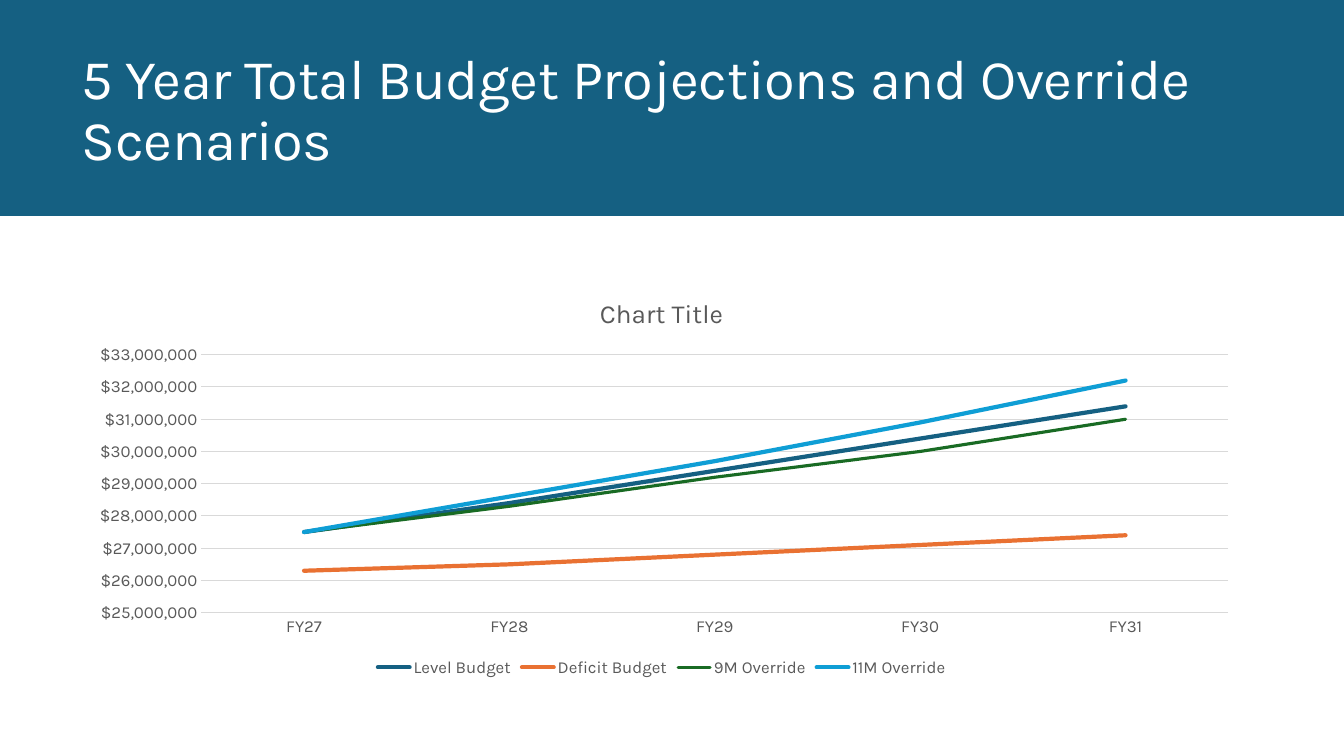
from dataclasses import dataclass

from lxml.etree import SubElement
from pptx import Presentation
from pptx.chart.chart import Chart
from pptx.chart.data import CategoryChartData
from pptx.dml.color import RGBColor
from pptx.enum.chart import XL_CHART_TYPE, XL_LEGEND_POSITION, XL_TICK_MARK
from pptx.enum.shapes import MSO_SHAPE
from pptx.enum.text import MSO_ANCHOR, MSO_AUTO_SIZE, PP_ALIGN
from pptx.oxml.ns import qn
from pptx.slide import Slide
from pptx.util import Pt

TEAL = RGBColor(0x15, 0x60, 0x82)
ORANGE = RGBColor(0xE9, 0x71, 0x32)
GREEN = RGBColor(0x19, 0x6B, 0x24)
BLUE = RGBColor(0x0F, 0x9E, 0xD5)
WHITE = RGBColor(0xFF, 0xFF, 0xFF)
BLACK = RGBColor(0x00, 0x00, 0x00)
TEXT_GREY = RGBColor(0x59, 0x59, 0x59)
RULE_GREY = RGBColor(0xD9, 0xD9, 0xD9)

FONT = "Karla"
MILLION = 1_000_000
SLIDE_WIDTH, SLIDE_HEIGHT = Pt(960), Pt(540)
LEFT_MARGIN = Pt(51.1)
YEARS = [f"FY{year}" for year in range(27, 32)]
PLOT_LAYOUT = {"x": 0.11, "y": 0.19, "w": 0.87, "h": 0.64}


@dataclass
class Scenario:
    name: str
    millions: tuple[float, ...]
    color: RGBColor
    width: float = 3


SCENARIOS = [
    Scenario("Level Budget", (27.5, 28.4, 29.4, 30.4, 31.4), TEAL),
    Scenario("Deficit Budget", (26.3, 26.5, 26.8, 27.1, 27.4), ORANGE),
    Scenario("9M Override", (27.5, 28.3, 29.2, 30.0, 31.0), GREEN, 2.25),
    Scenario("11M Override", (27.5, 28.6, 29.7, 30.9, 32.2), BLUE),
]


def set_attributes(target: object, values: dict[str, object]) -> None:
    for name, value in values.items():
        setattr(target, name, value)


def format_font(font: object, size: float, color: RGBColor) -> None:
    set_attributes(font, {"name": FONT, "size": Pt(size), "bold": False})
    font.color.rgb = color


def format_line(line: object, color: RGBColor, width: float) -> None:
    line.color.rgb = color
    line.width = Pt(width)


def add_header(slide: Slide) -> None:
    title = slide.shapes.title
    set_attributes(title, {"left": LEFT_MARGIN, "top": Pt(28.8),
                           "width": Pt(848.9), "height": Pt(97.9)})
    frame = title.text_frame
    frame.text = "5 Year Total Budget Projections and Override Scenarios"
    set_attributes(frame, {"word_wrap": True, "auto_size": MSO_AUTO_SIZE.NONE,
                           "vertical_anchor": MSO_ANCHOR.BOTTOM})
    paragraph = frame.paragraphs[0]
    set_attributes(paragraph, {"alignment": PP_ALIGN.LEFT, "line_spacing": 0.9})
    run = paragraph.runs[0]
    format_font(run.font, 40, WHITE)
    run.font.element.set("spc", "-20") if hasattr(run.font, "element") else None

    # Band, placed behind the title
    band = slide.shapes.add_shape(MSO_SHAPE.RECTANGLE, 0, 0, SLIDE_WIDTH, Pt(154.3))
    band.shadow.inherit = False
    band.fill.solid()
    band.fill.fore_color.rgb = TEAL
    band.line.fill.background()
    band.element.addnext(title.element)
    for properties in title.element.iter(qn("a:rPr")):
        properties.set("spc", "-20")


def place_plot(chart: Chart) -> None:
    plot_area = chart.element.find(".//" + qn("c:plotArea"))
    for layout in plot_area.findall(qn("c:layout")):
        plot_area.remove(layout)
    layout = SubElement(plot_area, qn("c:layout"))
    plot_area.insert(0, layout)
    manual = SubElement(layout, qn("c:manualLayout"))
    settings = {"layoutTarget": "inner", "xMode": "edge", "yMode": "edge", **PLOT_LAYOUT}
    for name, value in settings.items():
        SubElement(manual, qn(f"c:{name}")).set("val", str(value))


def add_budget_chart(slide: Slide) -> None:
    data = CategoryChartData(number_format='"$"#,##0')
    data.categories = YEARS
    for scenario in SCENARIOS:
        data.add_series(scenario.name, [round(value * MILLION) for value in scenario.millions])
    chart = slide.shapes.add_chart(XL_CHART_TYPE.LINE, LEFT_MARGIN, Pt(198.7),
                                   Pt(843.1), Pt(288), data).chart
    format_font(chart.font, 10, BLACK)

    # Title and legend
    chart.has_title = True
    title_frame = chart.chart_title.text_frame
    title_frame.text = "Chart Title"
    format_font(title_frame.paragraphs[0].runs[0].font, 18.6, TEXT_GREY)
    chart.has_legend = True
    set_attributes(chart.legend, {"position": XL_LEGEND_POSITION.BOTTOM,
                                  "include_in_layout": False})
    format_font(chart.legend.font, 12, TEXT_GREY)

    # Axes
    for axis in (chart.category_axis, chart.value_axis):
        set_attributes(axis, {"major_tick_mark": XL_TICK_MARK.NONE,
                              "minor_tick_mark": XL_TICK_MARK.NONE})
        format_font(axis.tick_labels.font, 12, TEXT_GREY)
    format_line(chart.category_axis.format.line, RULE_GREY, 0.75)
    value_axis = chart.value_axis
    set_attributes(value_axis, {"minimum_scale": 25 * MILLION, "maximum_scale": 33 * MILLION,
                                "major_unit": MILLION, "has_major_gridlines": True})
    set_attributes(value_axis.tick_labels, {"number_format": '"$"#,##0',
                                            "number_format_is_linked": False})
    value_axis.format.line.fill.background()
    format_line(value_axis.major_gridlines.format.line, RULE_GREY, 0.75)

    # Scenario lines with round ends
    plot = chart.plots[0]
    plot.vary_by_categories = False
    for series, scenario in zip(plot.series, SCENARIOS):
        series.smooth = False
        format_line(series.format.line, scenario.color, scenario.width)
    for outline in chart.element.xpath(".//c:ser/c:spPr/a:ln"):
        outline.set("cap", "rnd")
    place_plot(chart)


def main() -> None:
    presentation = Presentation()
    set_attributes(presentation, {"slide_width": SLIDE_WIDTH, "slide_height": SLIDE_HEIGHT})
    slide = presentation.slides.add_slide(presentation.slide_layouts.get_by_name("Title Only"))
    add_header(slide)
    add_budget_chart(slide)
    presentation.save("out.pptx")


if __name__ == "__main__":
    main()
